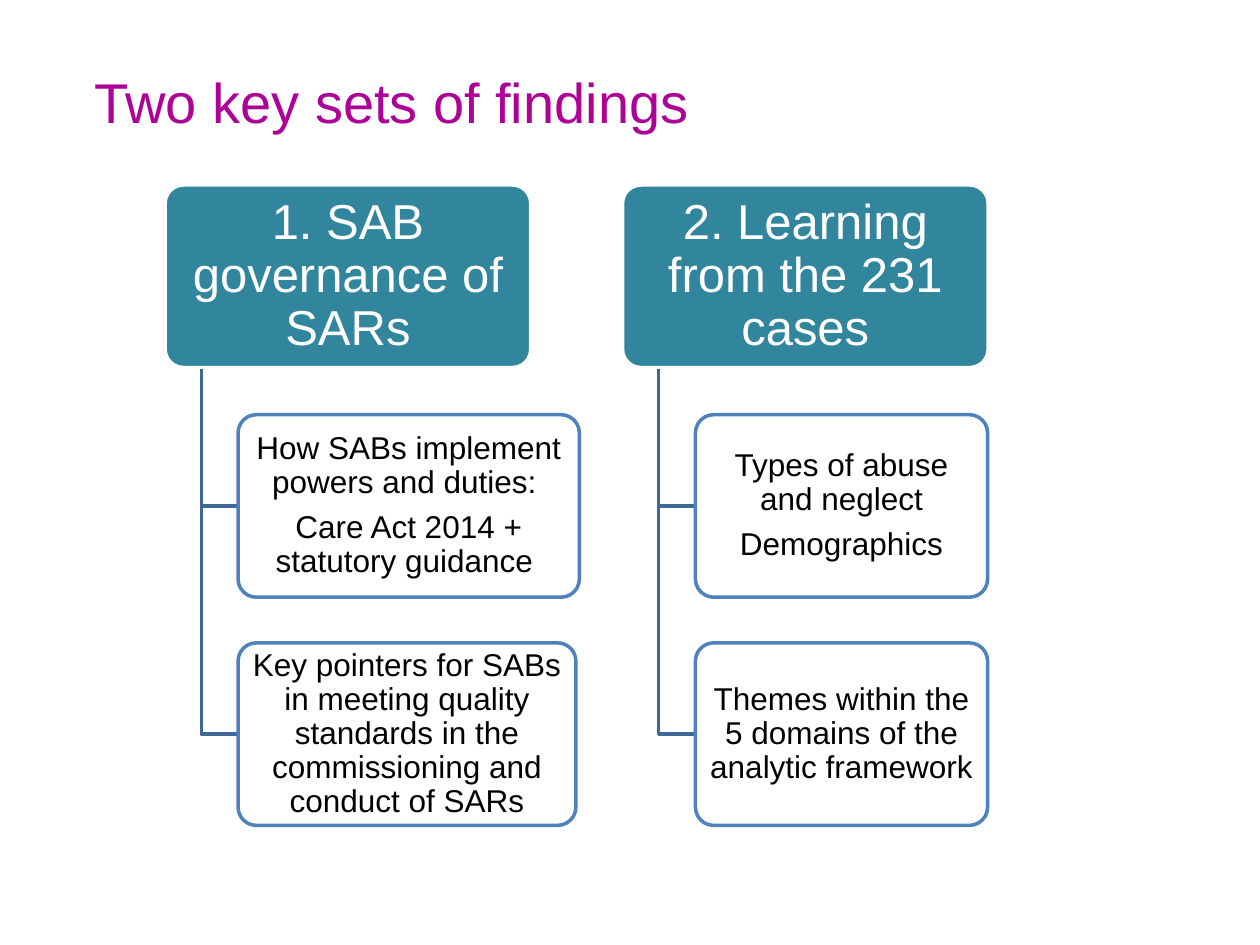
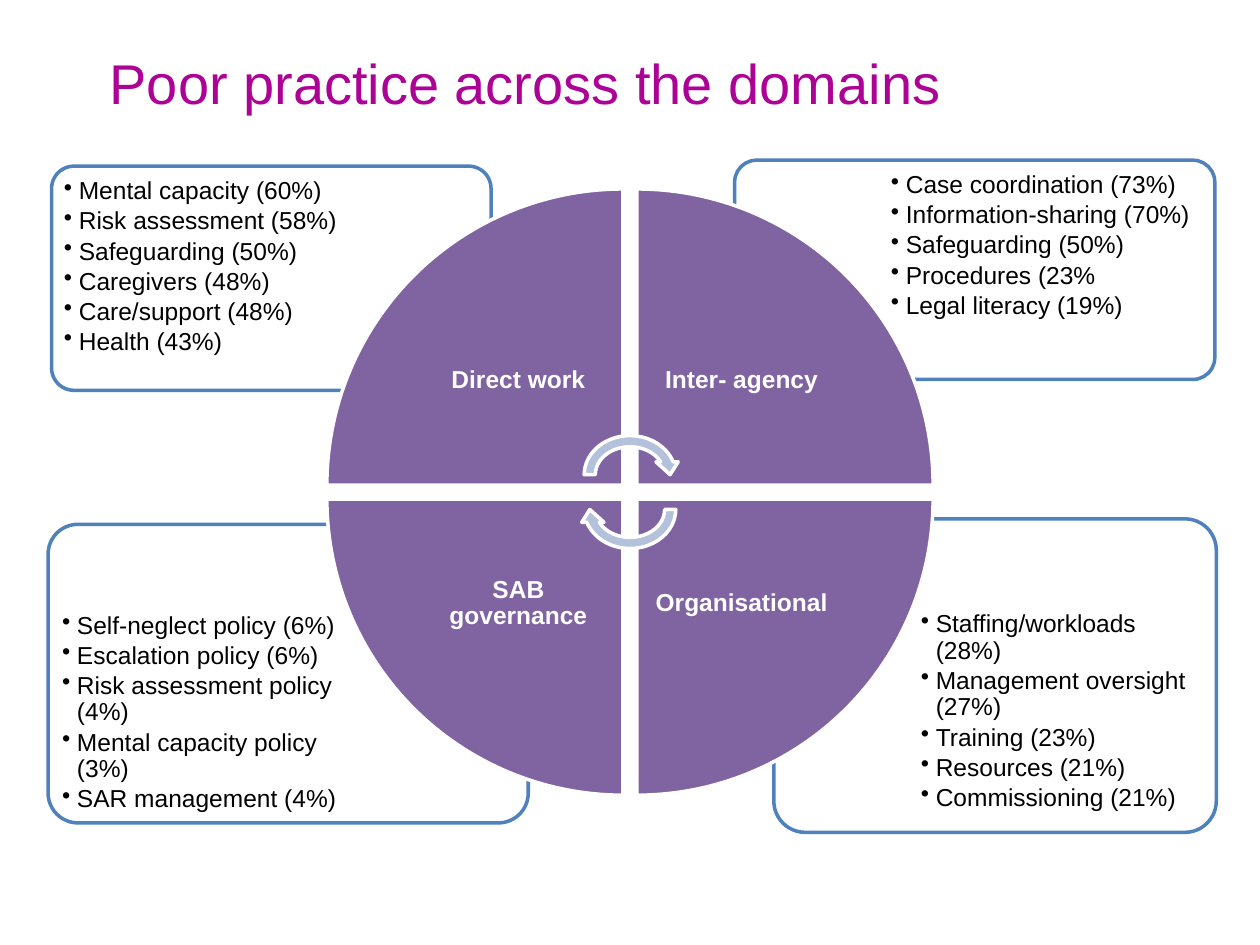
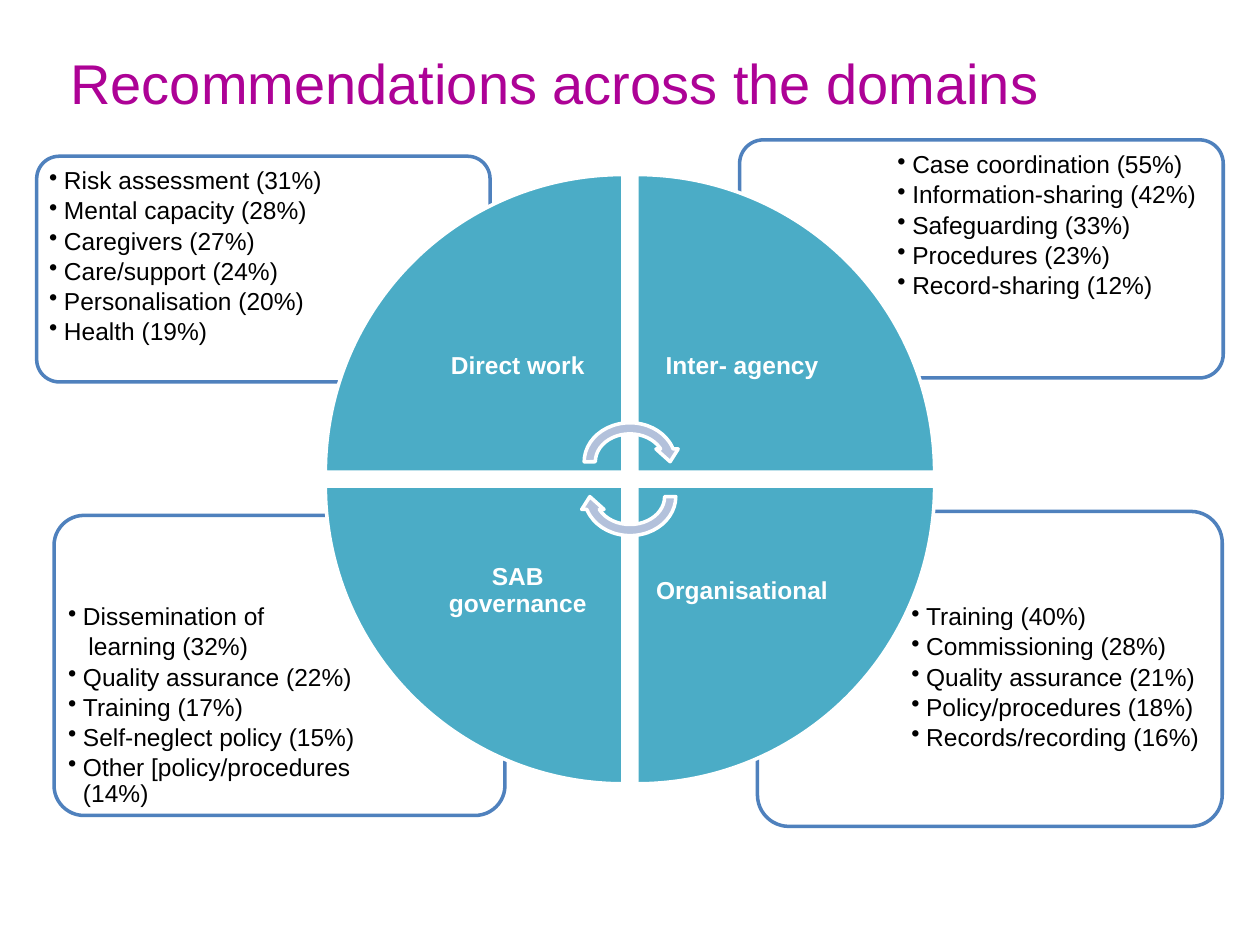
from dataclasses import dataclass
from lxml.etree import SubElement
from pptx import Presentation
from pptx.dml.color import RGBColor
from pptx.enum.shapes import MSO_SHAPE
from pptx.enum.text import MSO_ANCHOR, MSO_AUTO_SIZE, PP_ALIGN
from pptx.oxml.ns import qn
from pptx.util import Cm, Pt

MAGENTA = RGBColor(0xAD, 0x02, 0x96)
TEAL = RGBColor(0x31, 0x85, 0x9C)
BLUE = RGBColor(0x4F, 0x81, 0xBD)
DARK_BLUE = RGBColor(0x3F, 0x67, 0x97)
PALE_BLUE = RGBColor(0xB3, 0xC1, 0xDB)
PURPLE = RGBColor(0x80, 0x64, 0xA2)
AQUA = RGBColor(0x4B, 0xAC, 0xC6)
WHITE = RGBColor(0xFF, 0xFF, 0xFF)
BLACK = RGBColor(0, 0, 0)

CENTRE_X = 12.7
WEDGE_GAP = 0.28
ARROW_WIDTH, ARROW_HEIGHT, ARROW_OFFSET = 2.07, 1.8, 0.35
DOMAINS = [
    ("Direct work", 0, 0),
    ("Inter- agency", 1, 0),
    ("Organisational", 1, 1),
    ("SAB governance", 0, 1),
]


@dataclass
class Panel:
    left: float
    top: float
    width: float
    height: float
    findings: list
    continuations: tuple = ()


class Deck:
    font = "Arial"

    def __init__(self):
        self.presentation = Presentation()
        self.presentation.slide_width = Cm(25.4)
        self.presentation.slide_height = Cm(19.05)
        self.slide = None

    def new_slide(self, title, left, top, width):
        layout = self.presentation.slide_layouts[6]
        self.slide = self.presentation.slides.add_slide(layout)
        heading = self.slide.shapes.add_textbox(Cm(left), Cm(top), Cm(width), Cm(1.63))
        frame = heading.text_frame
        frame.word_wrap = False
        frame.auto_size = MSO_AUTO_SIZE.SHAPE_TO_FIT_TEXT
        frame.text = title
        self.style_runs(frame.paragraphs[0], 32, MAGENTA)

    def style_runs(self, paragraph, size, color, bold=False):
        for run in paragraph.runs:
            run.font.name = self.font
            run.font.size = Pt(size)
            run.font.color.rgb = color
            run.font.bold = bold

    def shape(self, kind, left, top, width, height, fill, line, rotation=0):
        shape = self.slide.shapes.add_shape(kind, Cm(left), Cm(top), Cm(width), Cm(height))
        shape.shadow.inherit = False
        shape.fill.solid()
        shape.fill.fore_color.rgb = fill
        shape.line.color.rgb = line
        shape.line.width = Pt(2)
        shape.rotation = rotation
        return shape

    def rounded_box(self, left, top, width, height, fill=WHITE, line=BLUE):
        box = self.shape(MSO_SHAPE.ROUNDED_RECTANGLE, left, top, width, height, fill, line)
        box.adjustments[0] = 0.1
        if fill == WHITE:
            color = box._element.spPr.find(qn("a:solidFill"))[0]
            SubElement(color, qn("a:alpha"), val="90000")
        return box

    def textbox(self, left, top, width, height):
        return self.slide.shapes.add_textbox(Cm(left), Cm(top), Cm(width), Cm(height))

    def fill_text(self, frame, lines, margins, after):
        frame.word_wrap = True
        frame.margin_left = frame.margin_right = Cm(margins[0])
        frame.margin_top = frame.margin_bottom = Cm(margins[1])
        frame.text = "\n".join(lines)
        for paragraph in frame.paragraphs:
            paragraph.line_spacing = 0.9
            paragraph.space_after = Pt(after)

    def centred(self, frame, lines, size, color, margins, bold=False):
        self.fill_text(frame, lines, margins, 0.35 * size)
        frame.vertical_anchor = MSO_ANCHOR.MIDDLE
        for paragraph in frame.paragraphs:
            paragraph.alignment = PP_ALIGN.CENTER
            self.style_runs(paragraph, size, color, bold)

    def bullets(self, frame, findings, continuations):
        self.fill_text(frame, findings, (0.15, 0.15), 2.1)
        for paragraph in frame.paragraphs:
            paragraph.level = 1
            properties = paragraph._p.get_or_add_pPr()
            continued = paragraph.text in continuations
            properties.set("marL", str(Cm(0.41 if continued else 0.3)))
            properties.set("indent", str(0 if continued else -Cm(0.3)))
            if continued:
                SubElement(properties, qn("a:buNone"))
            else:
                SubElement(properties, qn("a:buChar"), char="•")
            self.style_runs(paragraph, 14, BLACK)

    def elbow(self, left, top, right, bottom):
        builder = self.slide.shapes.build_freeform(Cm(left), Cm(top))
        corners = [(Cm(left), Cm(bottom)), (Cm(right), Cm(bottom))]
        builder.add_line_segments(corners, close=False)
        link = builder.convert_to_shape()
        link.shadow.inherit = False
        link.fill.background()
        link.line.color.rgb = DARK_BLUE
        link.line.width = Pt(2)

    def branch(self, left, heading, topics):
        top, height, pitch = 3.73, 3.68, 4.6
        header = self.rounded_box(left, top, 7.37, height, TEAL, WHITE)
        self.centred(header.text_frame, [heading], 28, WHITE, (0.15, 0.1))
        topic_left = left + 1.47
        for row, (width, lines) in enumerate(topics):
            topic_top = 8.36 + row * pitch
            self.elbow(left + 0.73, top + height + 0.03, topic_left, topic_top + height / 2)
            topic = self.rounded_box(topic_left, topic_top, width, height)
            self.centred(topic.text_frame, lines, 18, BLACK, (0.1, 0.08))

    def panel(self, panel, centre_y):
        self.rounded_box(panel.left, panel.top, panel.width, panel.height)
        inset = 0.022 * panel.height
        left, top = panel.left + inset, panel.top + inset
        if panel.left > CENTRE_X:
            left += 0.3 * panel.width
        if panel.top > centre_y:
            top += 0.25 * panel.height
        listing = self.textbox(left, top, 0.7 * panel.width - 2 * inset,
                               0.75 * panel.height - 2 * inset)
        self.bullets(listing.text_frame, panel.findings, panel.continuations)

    def wheel(self, centre_y, size, color):
        half_gap = WEDGE_GAP / 2
        label_size = 0.707 * size

        def start(centre, length, after):
            return centre + half_gap if after else centre - half_gap - length

        for turn, (domain, right, below) in enumerate(DOMAINS):
            self.shape(MSO_SHAPE.PIE_WEDGE, start(CENTRE_X, size, right),
                       start(centre_y, size, below), size, size, color, WHITE, 90 * turn)
            label = self.textbox(start(CENTRE_X, label_size, right),
                                 start(centre_y, label_size, below), label_size, label_size)
            self.centred(label.text_frame, [domain], 14, WHITE, (0.28, 0.28), bold=True)
        for offset, rotation in ((-ARROW_OFFSET, 0), (ARROW_OFFSET, 180)):
            self.shape(MSO_SHAPE.CIRCULAR_ARROW, CENTRE_X - ARROW_WIDTH / 2,
                       centre_y + offset - ARROW_HEIGHT / 2, ARROW_WIDTH, ARROW_HEIGHT,
                       PALE_BLUE, WHITE, rotation)

    def domains(self, panels, centre_y, size, color):
        for panel in panels:
            self.panel(panel, centre_y)
        self.wheel(centre_y, size, color)


def main():
    deck = Deck()

    deck.new_slide("Two key sets of findings", 1.65, 1.24, 12.6)
    deck.branch(3.33, "1. SAB governance of SARs", [
        (6.88, ["How SABs implement powers and duties: ",
                "Care Act 2014 + statutory guidance "]),
        (6.81, ["Key pointers for SABs in meeting quality standards in the "
                "commissioning and conduct of SARs"]),
    ])
    deck.branch(12.55, "2. Learning from the 231 cases", [
        (5.89, ["Types of abuse and neglect", "Demographics"]),
        (5.89, ["Themes within the 5 domains of the analytic framework"]),
    ])

    deck.new_slide("Poor practice across the domains", 1.96, 0.86, 17.4)
    deck.domains([
        Panel(15.6, 10.46, 8.92, 6.32, [
            "Staffing/workloads (28%)", "Management oversight (27%)", "Training (23%)",
            "Resources (21%)", "Commissioning (21%)"]),
        Panel(0.97, 10.57, 9.68, 6.02, [
            "Self-neglect policy (6%)", "Escalation policy (6%)",
            "Risk assessment policy (4%)", "Mental capacity policy (3%)",
            "SAR management (4%)"]),
        Panel(14.81, 3.23, 9.68, 4.42, [
            "Case coordination (73%)", "Information-sharing (70%)", "Safeguarding (50%)",
            "Procedures (23%", "Legal literacy (19%)"]),
        Panel(1.04, 3.35, 8.86, 4.52, [
            "Mental capacity (60%)", "Risk assessment (58%)", "Safeguarding (50%)",
            "Caregivers (48%)", "Care/support (48%)", "Health (43%)"]),
    ], 9.92, 5.97, PURPLE)

    deck.new_slide("Recommendations across the domains", 1.17, 0.86, 20.19)
    deck.domains([
        Panel(15.27, 10.31, 9.37, 6.35, [
            "Training (40%)", "Commissioning (28%)", "Quality assurance (21%)",
            "Policy/procedures (18%)", "Records/recording (16%)"]),
        Panel(1.09, 10.39, 9.09, 6.05, [
            "Dissemination of", "learning (32%)", "Quality assurance (22%)",
            "Training (17%)", "Self-neglect policy (15%)",
            "Other [policy/procedures (14%)"], ("learning (32%)",)),
        Panel(14.91, 2.82, 9.75, 4.8, [
            "Case coordination (55%)", "Information-sharing (42%)", "Safeguarding (33%)",
            "Procedures (23%)", "Record-sharing (12%)"]),
        Panel(0.74, 3.15, 9.14, 4.55, [
            "Risk assessment (31%)", "Mental capacity (28%)", "Caregivers (27%)",
            "Care/support (24%)", "Personalisation (20%)", "Health (19%)"]),
    ], 9.66, 6.0, AQUA)

    deck.presentation.save("out.pptx")


if __name__ == "__main__":
    main()
